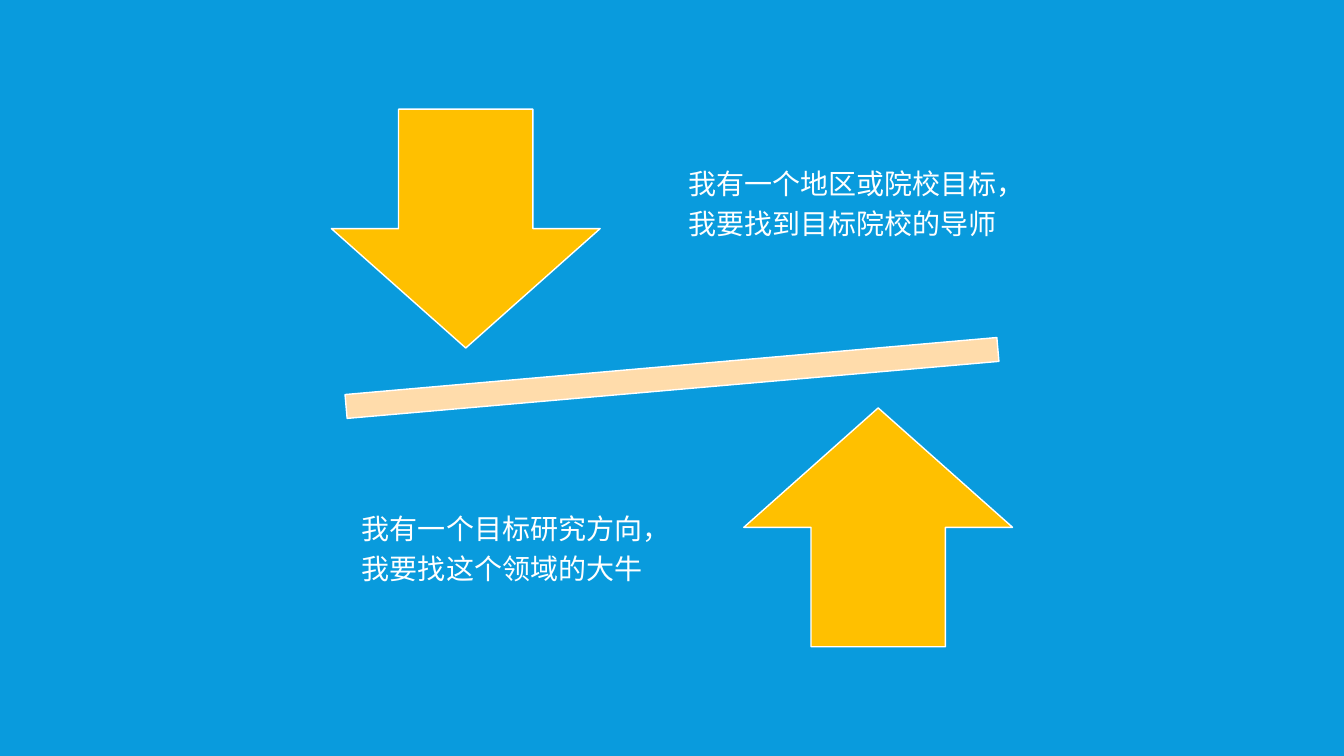
from dataclasses import dataclass

from pptx import Presentation
from pptx import util as u
from pptx.dml.color import RGBColor
from pptx.enum import shapes, text


@dataclass(frozen=True)
class Theme:
    """Colours and type sizes of the slide."""
    background: str = "099BDD"
    arrow: str = "FFC000"
    plank: str = "FFDCAB"
    light: str = "FFFFFF"
    font: str = "Noto Sans CJK SC"
    body: float = 20


THEME = Theme()


def add_shape(slide, kind, left, top, width, height, fill, rotation=0):
    """Add a filled preset shape with a thin light outline."""
    shape = slide.shapes.add_shape(kind, u.Pt(left), u.Pt(top), u.Pt(width), u.Pt(height))
    shape.shadow.inherit = False
    shape.fill.solid()
    shape.fill.fore_color.rgb = RGBColor.from_string(fill)
    shape.line.color.rgb = RGBColor.from_string(THEME.light)
    shape.line.width = u.Pt(1)
    shape.rotation = rotation


def add_text(slide, lines, left, top, width, height, *, size=THEME.body,
             color=THEME.light, align=text.PP_ALIGN.CENTER, inset=11,
             line_spacing=0.9, space_after=7):
    """Add a vertically centred text box with one paragraph per line."""
    box = slide.shapes.add_textbox(u.Pt(left), u.Pt(top), u.Pt(width), u.Pt(height))
    frame = box.text_frame
    frame.word_wrap = True
    frame.vertical_anchor = text.MSO_ANCHOR.MIDDLE
    frame.margin_left = frame.margin_right = u.Pt(inset)
    frame.margin_top = frame.margin_bottom = u.Pt(inset)
    frame.text = "\n".join(lines)
    for paragraph in frame.paragraphs:
        paragraph.alignment = align
        paragraph.line_spacing = line_spacing
        paragraph.space_after = u.Pt(space_after)
        font = paragraph.runs[0].font
        font.size = u.Pt(size)
        font.name = THEME.font
        font.color.rgb = RGBColor.from_string(color)


def add_balance(slide, left, top, width, height, upper_lines, lower_lines):
    """Draw opposing arrows around a tilted plank, each with its text."""
    arrow_width, arrow_height, arrow_inset = 192, 170.6, 74.7
    text_height, overhang = 179, 21
    plank_height = 72.7
    right, bottom = left + width, top + height
    centre = left + width / 2
    kinds = shapes.MSO_SHAPE

    add_shape(slide, kinds.MATH_MINUS, left, top + (height - plank_height) / 2,
              width, plank_height, THEME.plank, rotation=-5)
    add_shape(slide, kinds.DOWN_ARROW, left + arrow_inset, top,
              arrow_width, arrow_height, THEME.arrow)
    add_text(slide, upper_lines, centre, top - overhang, 243.6, text_height)
    add_shape(slide, kinds.UP_ARROW, right - arrow_inset - arrow_width,
              bottom - arrow_height, arrow_width, arrow_height, THEME.arrow)
    add_text(slide, lower_lines, left + 85, bottom + overhang - text_height,
             223.4, text_height)


def main():
    """Build and save the presentation."""
    presentation = Presentation()
    presentation.slide_width, presentation.slide_height = u.Pt(960), u.Pt(540)
    slide = presentation.slides.add_slide(presentation.slide_layouts[6])
    slide.background.fill.solid()
    slide.background.fill.fore_color.rgb = RGBColor.from_string(THEME.background)
    add_balance(slide, 162, 78, 636, 384,
                ["我有一个地区或院校目标，", "我要找到目标院校的导师"],
                ["我有一个目标研究方向，", "我要找这个领域的大牛"])
    presentation.save("out.pptx")


if __name__ == "__main__":
    main()
